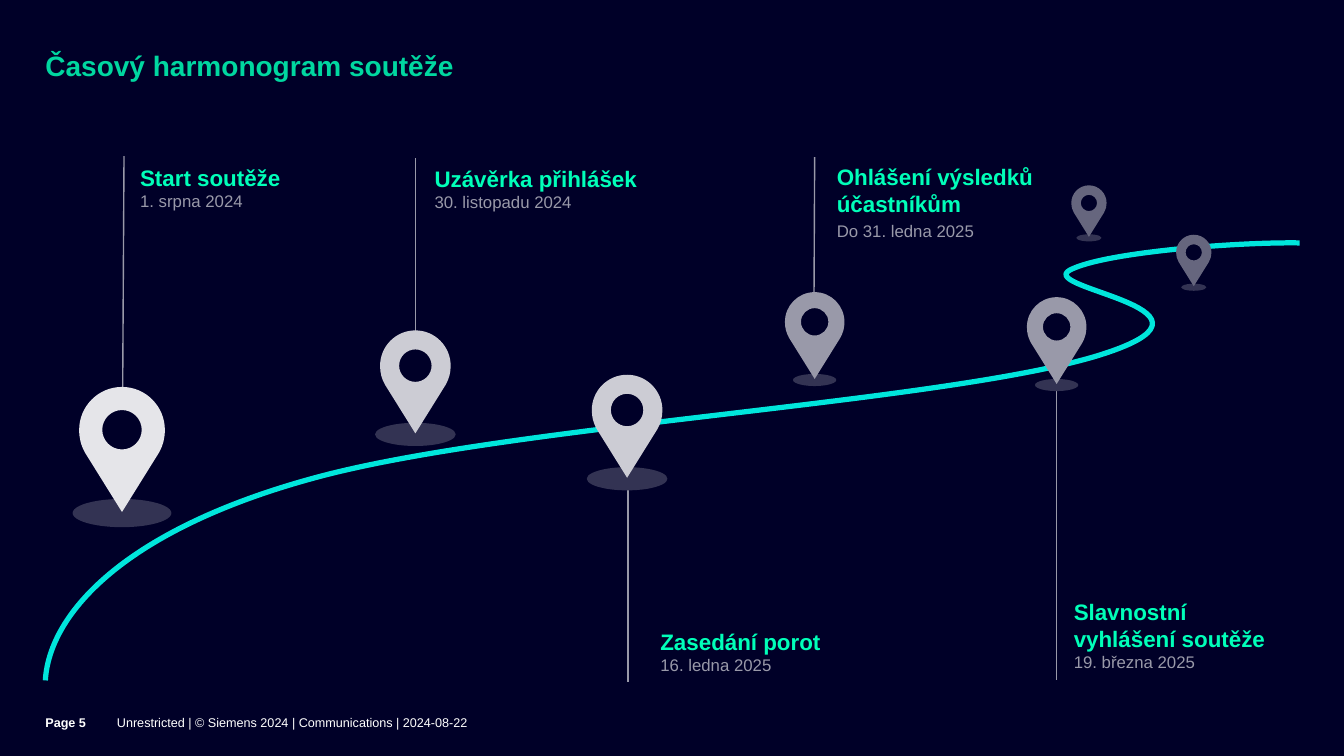
"""Build the competition timeline slide with a winding road and map pins."""
import dataclasses
import typing

import pptx
import pptx.dml.color
import pptx.enum.shapes
import pptx.enum.text
import pptx.oxml.ns
import pptx.util
from lxml import etree

Inches = pptx.util.Inches
Pt = pptx.util.Pt
RGBColor = pptx.dml.color.RGBColor
Anchor = pptx.enum.text.MSO_ANCHOR
AutoSize = pptx.enum.text.MSO_AUTO_SIZE
qn = pptx.oxml.ns.qn
Point = tuple[float, float]

NIGHT = RGBColor(0x00, 0x00, 0x28)
MINT = RGBColor(0x00, 0xFF, 0xB9)
GREEN = RGBColor(0x00, 0xD7, 0xA0)
CYAN = RGBColor(0x00, 0xE6, 0xDC)
WHITE = RGBColor(0xFF, 0xFF, 0xFF)
GREY = RGBColor(0x99, 0x99, 0xA9)
SHADOW = RGBColor(0x33, 0x33, 0x53)
NEAR = RGBColor(0xE5, 0xE5, 0xE9)
MIDDLE = RGBColor(0xCC, 0xCC, 0xD4)
FAR = RGBColor(0x66, 0x66, 0x7E)

HEADING = {"size": Pt(16), "bold": True, "color": MINT}
DATE = {"size": Pt(12), "bold": False, "color": GREY}
TITLE = {"size": Pt(20), "bold": True, "color": GREEN}
PAGE = {"size": Pt(9), "bold": True, "color": WHITE}
FOOTER = {"size": Pt(9), "bold": False, "color": WHITE}
LABEL_INSETS = (0.16, 0.08, 0.16, 0.08)
FOOTER_INSETS = (0, 0, 0, 0.07)


@dataclasses.dataclass
class Pin:
    tip: Point
    width: float
    color: RGBColor
    shadow: Point


@dataclasses.dataclass
class Milestone:
    heading: str
    date: str
    box: tuple[float, float, float, float]
    line: tuple[float, float, float, float]
    anchor: Anchor = Anchor.TOP
    gap: int = 0


PINS = [
    Pin((1.21, 5.08), 0.85, NEAR, (0.98, 0.28)),
    Pin((4.12, 4.3), 0.7, MIDDLE, (0.8, 0.23)),
    Pin((6.22, 4.74), 0.7, MIDDLE, (0.8, 0.23)),
    Pin((8.08, 3.76), 0.59, GREY, (0.43, 0.12)),
    Pin((10.48, 3.81), 0.59, GREY, (0.43, 0.12)),
    Pin((10.8, 2.35), 0.35, FAR, (0.25, 0.07)),
    Pin((11.84, 2.84), 0.35, FAR, (0.25, 0.07)),
]
MILESTONES = [
    Milestone("Start soutěže", "1. srpna 2024", (1.23, 1.55, 2.95, 0.63), (1.23, 1.55, 1.21, 5.08)),
    Milestone("Uzávěrka přihlášek", "30. listopadu 2024", (4.15, 1.56, 2.56, 0.63), (4.12, 1.57, 4.12, 4.11)),
    Milestone("Ohlášení výsledků účastníkům", "Do 31. ledna 2025", (8.14, 1.54, 2.6, 0.94), (8.08, 1.56, 8.07, 3.74), gap=3),
    Milestone("Zasedání porot", "16. ledna 2025", (6.39, 6.15, 2.56, 0.63), (6.23, 4.56, 6.23, 6.77), Anchor.BOTTOM),
    Milestone("Slavnostní vyhlášení soutěže", "19. března 2025", (10.49, 5.85, 2.4, 0.9), (10.48, 3.81, 10.48, 6.75), Anchor.BOTTOM),
]
ROAD = [(0.45, 6.75), (0.49, 6.08), (1.25, 5.24), (3.16, 4.73), (5.07, 4.22), (9.27, 4), (10.85, 3.54),
        (12.42, 3.07), (10.27, 2.87), (10.61, 2.68), (10.95, 2.5), (12.28, 2.4), (12.89, 2.41)]
SHOULDER = (0.43, -0.69)
PIN_SIDE = [SHOULDER, (0.48, -0.78), (0.5, -0.86), (0.5, -0.96), (0.5, -1.23), (0.28, -1.46), (0, -1.46)]
PIN_BODY = [(0, 0), SHOULDER, SHOULDER, *PIN_SIDE, *((-x, y) for x, y in reversed(PIN_SIDE[:-1])), (0, 0)]
PIN_CENTRE = -0.96
HOLE_RADIUS = 0.23
DISC_RADIUS = 0.32
QUARTERS = [(0, -1), (0.55, -1), (1, -0.55), (1, 0), (1, 0.55), (0.55, 1), (0, 1),
            (-0.55, 1), (-1, 0.55), (-1, 0), (-1, -0.55), (-0.55, -1), (0, -1)]
PIN_HOLE = [(HOLE_RADIUS * x, PIN_CENTRE + HOLE_RADIUS * y) for x, y in QUARTERS]


def bend(shape: typing.Any) -> None:
    """Turn every three successive line segments into one cubic curve."""
    for outline in shape.element.iter(qn("a:path")):
        pending = []
        for segment in list(outline):
            pending = [*pending, segment] if segment.tag == qn("a:lnTo") else []
            if len(pending) == 3:
                curve = etree.Element(qn("a:cubicBezTo"))
                pending[0].addprevious(curve)
                for line in pending:
                    curve.append(line[0])
                    outline.remove(line)
                pending = []


def draw_outline(shapes: typing.Any, contours: list[list[Point]], closed: bool) -> typing.Any:
    """Draw contours of curve points, given in inches, as one freeform."""
    scaled = [[(Inches(x), Inches(y)) for x, y in contour] for contour in contours]
    builder = shapes.build_freeform(*scaled[0][0], scale=1.0)
    for index, contour in enumerate(scaled):
        if index:
            builder.move_to(*contour[0])
        builder.add_line_segments(contour[1:], close=closed)
    shape = builder.convert_to_shape()
    shape.shadow.inherit = False
    bend(shape)
    return shape


def paint(shape: typing.Any, color: RGBColor) -> None:
    """Fill a shape and remove its line."""
    shape.fill.solid()
    shape.fill.fore_color.rgb = color
    shape.line.fill.background()


def draw_ellipse(shapes: typing.Any, centre: Point, size: Point, color: RGBColor) -> None:
    """Draw a filled ellipse around its centre."""
    box = (centre[0] - size[0] / 2, centre[1] - size[1] / 2, *size)
    ellipse = shapes.add_shape(pptx.enum.shapes.MSO_SHAPE.OVAL, *map(Inches, box))
    ellipse.shadow.inherit = False
    paint(ellipse, color)


def draw_pin(slide: typing.Any, pin: Pin) -> None:
    """Draw a map pin with its ground shadow as a group."""
    shapes = slide.shapes.add_group_shape().shapes
    x, y = pin.tip
    contours = [[(x + a * pin.width, y + b * pin.width) for a, b in part] for part in (PIN_BODY, PIN_HOLE)]
    diameter = 2 * DISC_RADIUS * pin.width
    draw_ellipse(shapes, (x, y + 0.01), pin.shadow, SHADOW)
    draw_ellipse(shapes, (x, y + PIN_CENTRE * pin.width), (diameter, diameter), NIGHT)
    paint(draw_outline(shapes, contours, True), pin.color)


def draw_line(slide: typing.Any, ends: tuple[float, ...]) -> None:
    """Draw a thin grey line without a shadow."""
    connector = slide.shapes.add_connector(pptx.enum.shapes.MSO_CONNECTOR.STRAIGHT, *map(Inches, ends))
    connector.line.color.rgb = GREY
    connector.line.width = Pt(1)
    etree.SubElement(connector.element.find(qn("p:spPr")), qn("a:effectLst"))


def write(paragraph: typing.Any, text: str, style: dict[str, typing.Any]) -> None:
    """Write one run in the given style."""
    run = paragraph.add_run()
    run.text = text
    run.font.name = "Arial"
    for name, value in style.items():
        if name == "color":
            run.font.color.rgb = value
        else:
            setattr(run.font, name, value)


def set_frame(shape: typing.Any, insets: tuple[float, ...], anchor: Anchor, fit: AutoSize) -> typing.Any:
    """Format a text frame and return it."""
    margins = dict(zip(("margin_left", "margin_top", "margin_right", "margin_bottom"), map(Inches, insets)))
    for name, value in {**margins, "word_wrap": True, "vertical_anchor": anchor, "auto_size": fit}.items():
        setattr(shape.text_frame, name, value)
    return shape.text_frame


def draw_label(slide: typing.Any, milestone: Milestone) -> None:
    """Write a milestone heading above its date."""
    box = slide.shapes.add_textbox(*map(Inches, milestone.box))
    frame = set_frame(box, LABEL_INSETS, milestone.anchor, AutoSize.SHAPE_TO_FIT_TEXT)
    write(frame.paragraphs[0], milestone.heading, HEADING)
    paragraph = frame.add_paragraph()
    if milestone.gap:
        paragraph.space_before = Pt(milestone.gap)
    write(paragraph, milestone.date, DATE)


def draw_title(slide: typing.Any) -> None:
    """Place and format the title."""
    title = slide.shapes.title
    for name, value in {"left": 0.45, "top": 0.52, "width": 10.79, "height": 0.63}.items():
        setattr(title, name, Inches(value))
    paragraph = set_frame(title, (0, 0, 0.35, 0.02), Anchor.TOP, AutoSize.NONE).paragraphs[0]
    paragraph.alignment = pptx.enum.text.PP_ALIGN.LEFT
    paragraph.line_spacing = 0.9
    write(paragraph, "Časový harmonogram soutěže", TITLE)


def draw_footer(slide: typing.Any, left: float, width: float, text: str, style: dict[str, typing.Any]) -> None:
    """Write one part of the footer."""
    box = slide.shapes.add_textbox(*map(Inches, (left, 6.9, width, 0.6)))
    write(set_frame(box, FOOTER_INSETS, Anchor.MIDDLE, AutoSize.NONE).paragraphs[0], text, style)


def main() -> None:
    """Build and save the presentation."""
    presentation = pptx.Presentation()
    presentation.slide_width, presentation.slide_height = Inches(13.33), Inches(7.5)
    slide = presentation.slides.add_slide(presentation.slide_layouts[5])
    slide.background.fill.solid()
    slide.background.fill.fore_color.rgb = NIGHT
    draw_title(slide)
    road = draw_outline(slide.shapes, [ROAD], False)
    road.fill.background()
    road.line.color.rgb = CYAN
    road.line.width = Pt(3.75)
    for milestone in MILESTONES:
        draw_line(slide, milestone.line)
        draw_label(slide, milestone)
    for pin in PINS:
        draw_pin(slide, pin)
    draw_footer(slide, 0.45, 0.71, "Page 5", PAGE)
    draw_footer(slide, 1.16, 10.08, "Unrestricted | © Siemens 2024 | Communications | 2024-08-22", FOOTER)
    presentation.save("out.pptx")


if __name__ == "__main__":
    main()
